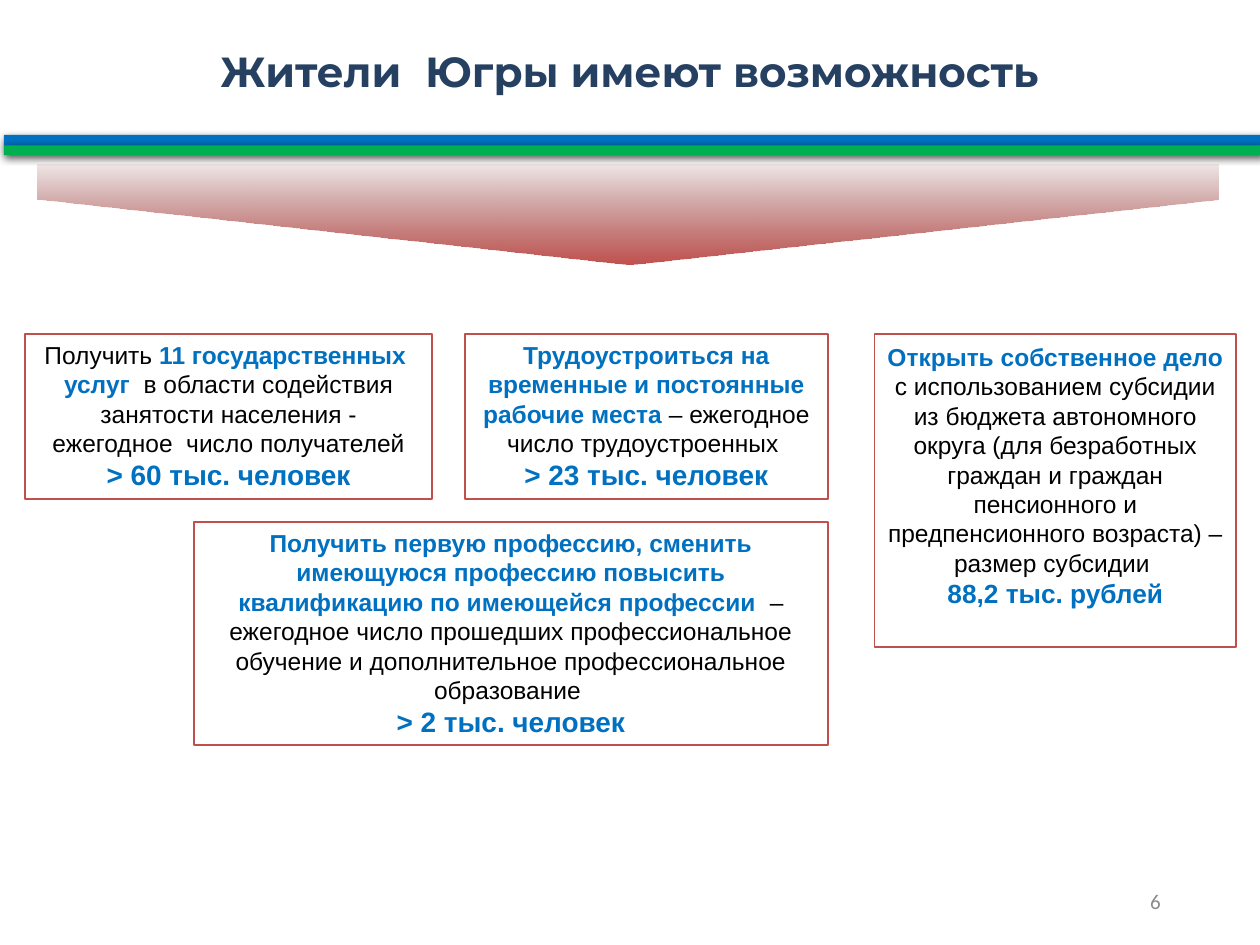
from lxml import etree
from pptx import Presentation
from pptx import util as u
from pptx.dml.color import RGBColor
from pptx.enum import shapes, text
from pptx.oxml import parse_xml
from pptx.oxml.ns import nsdecls, qn

BLUE, GREEN, RED, DARK_RED = "0070C0", "00B050", "C0504D", "893937"
NAVY, BLACK, GREY, WHITE = "254061", "000000", "8C8C8C", "FFFFFF"
TOP = 6.73
BOX_RIGHT = 16.69  # shared right edge of the middle and lower boxes


def rgb(value):
    return RGBColor.from_string(value)


class Deck:
    font = "Arial"
    body_size = 14

    def __init__(self, width, height):
        self.prs = Presentation()
        self.prs.slide_width, self.prs.slide_height = u.Cm(width), u.Cm(height)
        self.s = None

    def add_slide(self):
        self.s = self.prs.slides.add_slide(self.prs.slide_layouts[5])

    def style(self, r, size, color, bold=False, font=None):
        r.font.name = font or self.font
        r.font.size = u.Pt(size)
        r.font.bold = bold
        r.font.color.rgb = rgb(color)

    def title(self, words, left, top, width, height):
        sp = self.s.shapes.title
        sp.left, sp.top, sp.width, sp.height = map(u.Cm, (left, top, width, height))
        tf = sp.text_frame
        tf.text = words
        tf.auto_size = text.MSO_AUTO_SIZE.NONE
        p = tf.paragraphs[0]
        p.alignment = text.PP_ALIGN.CENTER
        self.style(p.runs[0], 24, NAVY, True, "Montserrat")

    def shape(self, kind, left, top, width, height, parent=None):
        sp = (parent or self.s).shapes.add_shape(
            kind, *map(u.Cm, (left, top, width, height)))
        sp.shadow.inherit = False
        sp.line.fill.background()
        return sp

    def down_arrow(self, left, top, width, height):
        """Arrow fading upwards; the frame is given before its quarter turn."""
        sp = self.shape(shapes.MSO_SHAPE.LEFT_ARROW, left, top, width, height)
        sp.rotation = 270
        sp.adjustments[0], sp.adjustments[1] = 1, 0.65
        sp.fill.gradient()
        sp.fill.gradient_angle = 0
        for stop, color, position in zip(sp.fill.gradient_stops, (RED, DARK_RED), (0, 1)):
            stop.color.rgb = rgb(color)
            stop.position = position
        last = list(sp._element.spPr.iter(qn("a:srgbClr")))[-1]
        etree.SubElement(last, qn("a:alpha"), val="12000")

    def bars(self, left, width, rows):
        """Grouped stripes with a soft shadow; rows hold top, height, colour."""
        group = self.s.shapes.add_group_shape()
        for top, height, color in rows:
            sp = self.shape(shapes.MSO_SHAPE.RECTANGLE, left, top, width, height, group)
            sp.fill.solid()
            sp.fill.fore_color.rgb = rgb(color)
            effects = sp._element.spPr.find(qn("a:effectLst"))
            effects.append(parse_xml(
                f'<a:outerShdw {nsdecls("a")} blurRad="{u.Pt(4.5)}" dist="{u.Pt(1.5)}" '
                'dir="5400000" algn="t" rotWithShape="0"><a:srgbClr val="000000">'
                '<a:alpha val="63000"/></a:srgbClr></a:outerShdw>'))

    def box(self, left, top, width, height, parts, result, size=16,
            anchor=text.MSO_ANCHOR.TOP, bottom=0.13):
        """Framed text; parts are (words, highlighted) pairs, result is the last line."""
        sp = self.shape(shapes.MSO_SHAPE.RECTANGLE, left, top, width, height)
        sp.fill.solid()
        sp.fill.fore_color.rgb = rgb(WHITE)
        sp.line.color.rgb = rgb(RED)
        sp.line.width = u.Pt(1)
        tf = sp.text_frame
        tf.word_wrap = True
        tf.vertical_anchor = anchor
        tf.margin_bottom = u.Cm(bottom)
        p = tf.paragraphs[0]
        for words, highlighted in parts:
            r = p.add_run()
            r.text = words
            self.style(r, self.body_size, BLUE if highlighted else BLACK, highlighted)
        last = tf.add_paragraph()
        last.text = result
        self.style(last.runs[0], size, BLUE, True)
        for p in tf.paragraphs:
            p.alignment = text.PP_ALIGN.CENTER

    def page_number(self, number, left, top, width, height):
        sp = self.s.shapes.add_textbox(*map(u.Cm, (left, top, width, height)))
        tf = sp.text_frame
        tf.word_wrap = True
        tf.vertical_anchor = text.MSO_ANCHOR.MIDDLE
        p = tf.paragraphs[0]
        p.text = number
        p.alignment = text.PP_ALIGN.RIGHT
        self.style(p.runs[0], 12, GREY, font="Calibri")


def main():
    deck = Deck(25.4, 19.05)
    deck.add_slide()
    deck.down_arrow(11.66, -7.57, 2.01, 23.8)
    deck.bars(0.08, 25.4, [(2.72, 0.23, BLUE), (2.93, 0.2, GREEN)])
    deck.title("Жители  Югры имеют возможность", 0.79, 0.79, 23.8, 1.27)

    deck.box(17.63, TOP, 7.29, 6.32, [
        ("Открыть собственное дело ", True),
        ("с использованием субсидии из бюджета автономного округа (для безработных "
         "граждан и граждан пенсионного и предпенсионного возраста) – размер субсидии ", False),
    ], "88,2 тыс. рублей", size=15, anchor=text.MSO_ANCHOR.MIDDLE, bottom=0.74)
    deck.box(BOX_RIGHT - 7.32, TOP, 7.32, 3.33, [
        ("Трудоустроиться на временные и постоянные рабочие места ", True),
        ("– ежегодное число трудоустроенных ", False),
    ], "> 23 тыс. человек")
    deck.box(BOX_RIGHT - 12.78, 10.52, 12.78, 4.5, [
        ("Получить первую профессию, сменить имеющуюся профессию повысить "
         "квалификацию по имеющейся профессии  ", True),
        ("– ежегодное число прошедших профессиональное обучение и дополнительное "
         "профессиональное образование ", False),
    ], "> 2 тыс. человек")
    deck.box(0.51, TOP, 8.2, 3.33, [
        ("Получить ", False),
        ("11 государственных  услуг  ", True),
        ("в области содействия занятости населения - ежегодное  число получателей", False),
    ], "> 60 тыс. человек")

    deck.page_number("6", 17.93, 17.65, 5.72, 1.02)
    deck.prs.save("out.pptx")


if __name__ == "__main__":
    main()
